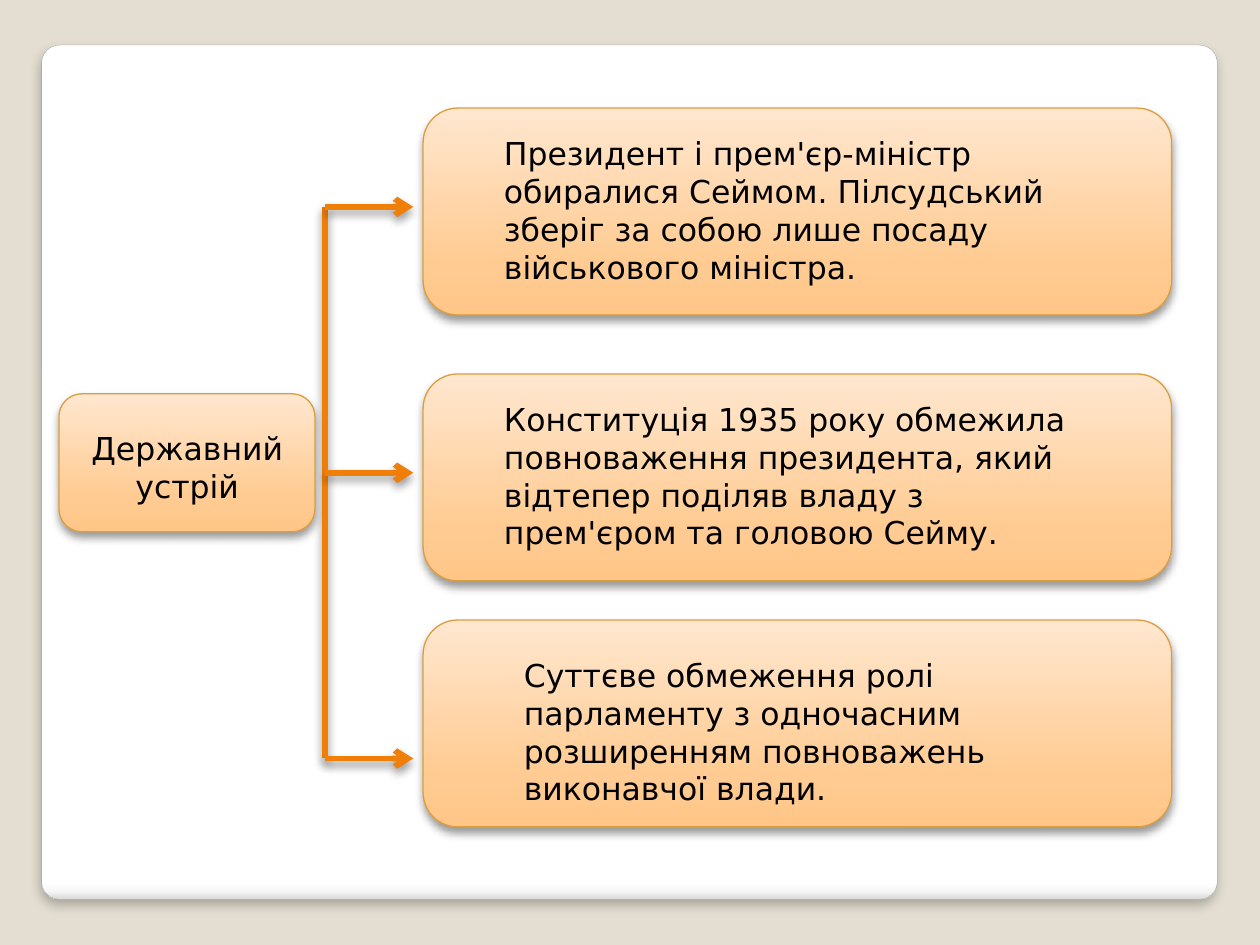
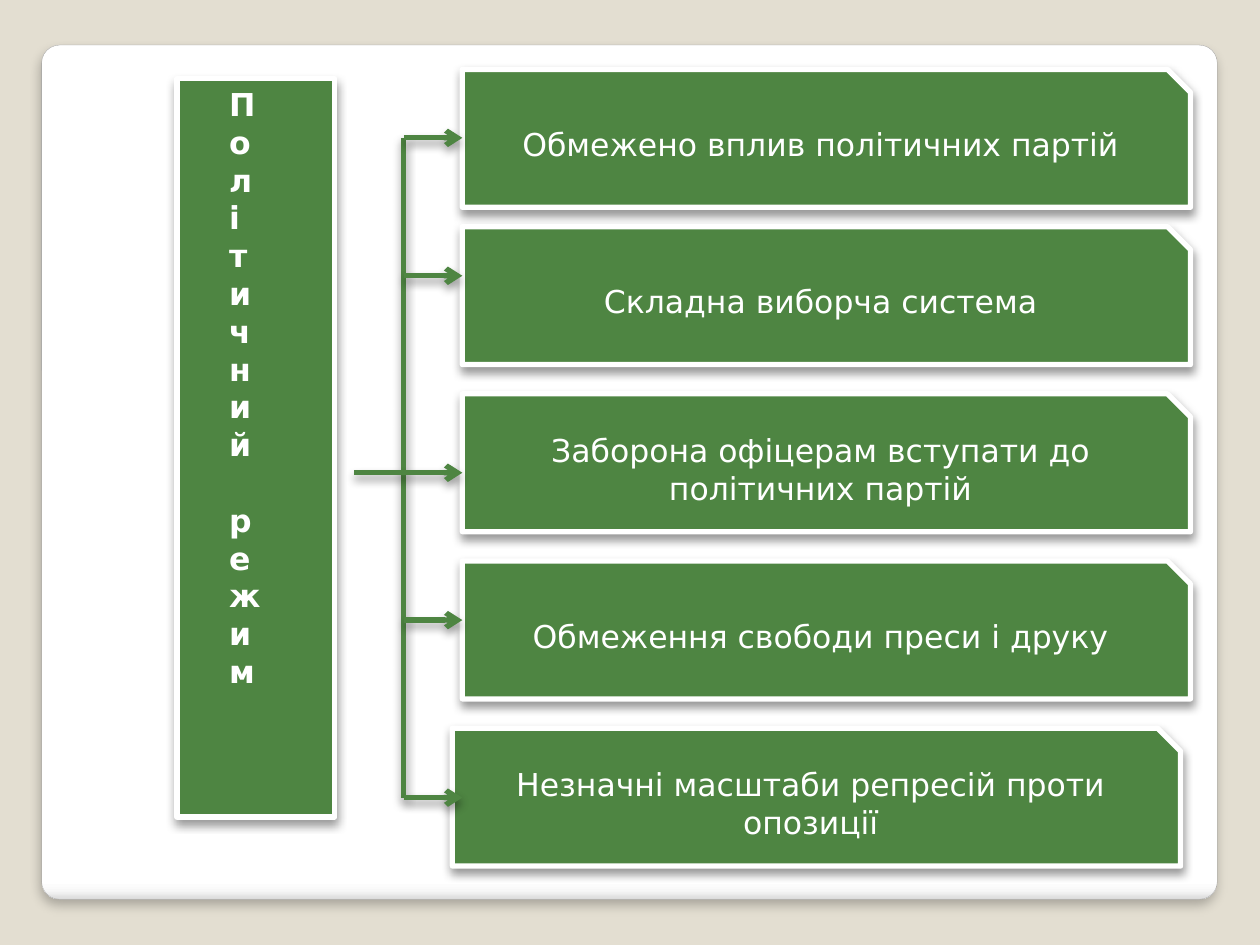
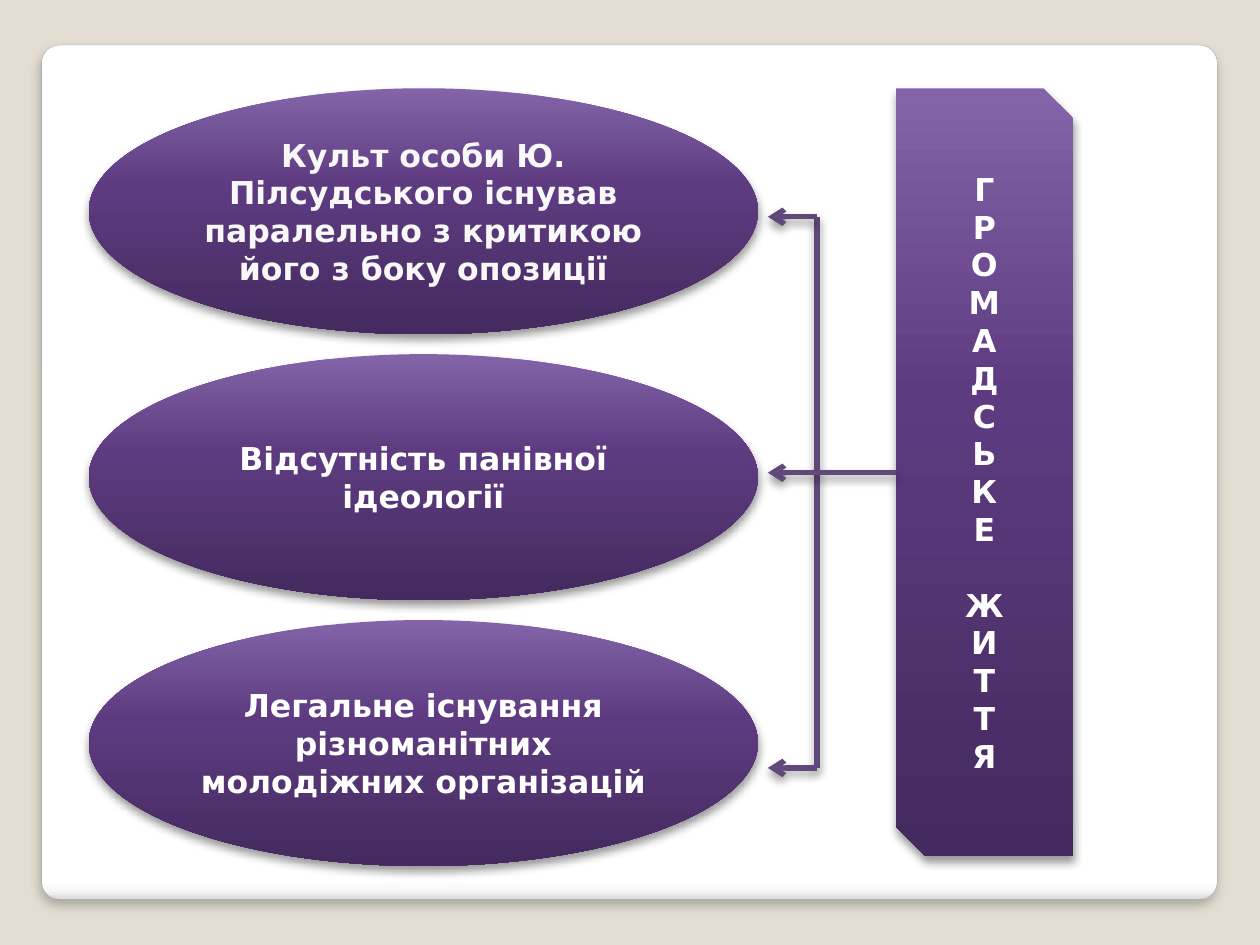
from lxml.etree import SubElement
from pptx import Presentation
from pptx.dml.color import RGBColor
from pptx.enum.shapes import MSO_CONNECTOR, MSO_SHAPE
from pptx.enum.text import MSO_ANCHOR, MSO_AUTO_SIZE, PP_ALIGN
from pptx.oxml.ns import qn
from pptx.util import Cm, Pt

# Shared look
FONT = "DejaVu Sans"
TEXT_SIZE = 18
BLACK = RGBColor(0x00, 0x00, 0x00)
WHITE = RGBColor(0xFF, 0xFF, 0xFF)
OFF_WHITE = RGBColor(0xF8, 0xF8, 0xF8)
BEIGE = RGBColor(0xE3, 0xDE, 0xD1)
CARD_EDGE = RGBColor(0xA4, 0xA4, 0xA4)
ORANGE = RGBColor(0xF0, 0x7F, 0x09)
ORANGE_EDGE = RGBColor(0xDB, 0x9E, 0x3F)
GREEN = RGBColor(0x4E, 0x85, 0x42)
PURPLE = RGBColor(0x60, 0x48, 0x78)

# Gradients run from top to bottom: (percent, colour)
CARD_GRADIENT = [(0, WHITE), (98, WHITE), (99, RGBColor(0xF7, 0xF7, 0xF7)),
                 (100, RGBColor(0xDA, 0xDA, 0xDA))]
ORANGE_GRADIENT = [(0, RGBColor(0xFF, 0xE7, 0xCF)), (75, RGBColor(0xFF, 0xCB, 0x92)),
                   (100, RGBColor(0xFF, 0xC6, 0x87))]
PURPLE_GRADIENT = [(0, RGBColor(0x83, 0x64, 0xA8)), (40, RGBColor(0x5E, 0x3B, 0x81)),
                   (100, RGBColor(0x44, 0x2A, 0x5E))]

# Shadows: opacity percent, blur and distance in points
CARD_SHADOW = (25, 6, 4)
SHADOW = (40, 5.2, 3)

# Slide 1: box top, text offset inside the box, text width, text
STATE_LABEL = "Державний устрій"
STATE_BOXES = [
    (2.18, (1.38, 0.4), 12.3, "Президент і прем'єр-міністр обиралися Сеймом. "
     "Пілсудський зберіг за собою лише посаду військового міністра."),
    (7.54, (1.38, 0.4), 11.91, "Конституція 1935 року обмежила повноваження президента, "
     "який відтепер поділяв владу з прем'єром та головою Сейму."),
    (12.5, (1.78, 0.6), 11.11, "Суттєве обмеження ролі парламенту з одночасним "
     "розширенням повноважень виконавчої влади."),
]
STATE_ARROWS = [4.17, 9.53, 15.29]

# Slide 2: box left, box top, arrow height, text
REGIME_LABEL = "Політичний режим"
REGIME_BOXES = [
    (9.32, 1.4, 2.78, "Обмежено вплив політичних партій"),
    (9.32, 4.57, 5.56, "Складна виборча система"),
    (9.32, 7.94, 9.53, "Заборона офіцерам вступати до політичних партій"),
    (9.32, 11.31, 12.5, "Обмеження свободи преси і друку"),
    (9.12, 14.68, 16.08, "Незначні масштаби репресій проти опозиції"),
]

# Slide 3: text, text colour
SOCIETY_LABEL = "ГРОМАДСЬКЕ ЖИТТЯ"
SOCIETY_ELLIPSES = [
    ("Культ особи Ю. Пілсудського існував паралельно з критикою його з боку опозиції",
     OFF_WHITE),
    ("Відсутність панівної ідеології", WHITE),
    ("Легальне існування різноманітних молодіжних організацій", WHITE),
]
SOCIETY_ARROWS = [4.37, 9.53, 15.48]


def add_shadow(shape, opacity, blur, distance):
    effects = SubElement(shape.element.spPr, qn("a:effectLst"))
    shadow = SubElement(effects, qn("a:outerShdw"), blurRad=str(Pt(blur)),
                        dist=str(Pt(distance)), dir="5400000", rotWithShape="0")
    color = SubElement(shadow, qn("a:srgbClr"), val=str(BLACK))
    SubElement(color, qn("a:alpha"), val=str(opacity * 1000))


def fill_gradient(shape, stops):
    shape.fill.gradient()
    shape.fill.gradient_angle = 270
    stop_list = shape.element.spPr.find(".//" + qn("a:gsLst"))
    for old_stop in list(stop_list):
        stop_list.remove(old_stop)
    for percent, color in stops:
        stop = SubElement(stop_list, qn("a:gs"), pos=str(percent * 1000))
        SubElement(stop, qn("a:srgbClr"), val=str(color))


def add_box(slide, kind, place, fill, edge=None, edge_width=0, shadow=SHADOW):
    """Draw a shadowed shape; fill is one colour or a list of gradient stops."""
    shape = slide.shapes.add_shape(kind, *map(Cm, place))
    if isinstance(fill, list):
        fill_gradient(shape, fill)
    else:
        shape.fill.solid()
        shape.fill.fore_color.rgb = fill
    if edge is None:
        shape.line.fill.background()
    else:
        shape.line.color.rgb = edge
        shape.line.width = Pt(edge_width)
    add_shadow(shape, *shadow)
    return shape


def write(shape, text, color, bold=False, align=PP_ALIGN.CENTER, anchor=MSO_ANCHOR.MIDDLE,
          stacked=False):
    frame = shape.text_frame
    frame.word_wrap = True
    frame.vertical_anchor = anchor
    if stacked:
        frame._txBody.bodyPr.set("vert", "wordArtVert")
    paragraph = frame.paragraphs[0]
    paragraph.text = text
    paragraph.alignment = align
    font = paragraph.font
    font.name, font.size, font.bold = FONT, Pt(TEXT_SIZE), bold
    font.color.rgb = color


def add_text(slide, place, text, color, **style):
    box = slide.shapes.add_textbox(*map(Cm, place))
    write(box, text, color, anchor=MSO_ANCHOR.TOP, **style)
    box.text_frame.auto_size = MSO_AUTO_SIZE.SHAPE_TO_FIT_TEXT


def add_line(slide, start, end, color, width, arrow=False):
    line = slide.shapes.add_connector(MSO_CONNECTOR.STRAIGHT, *map(Cm, start + end))
    line.line.color.rgb = color
    line.line.width = Pt(width)
    if arrow:
        SubElement(line.line._get_or_add_ln(), qn("a:tailEnd"), type="arrow")
    add_shadow(line, *SHADOW)


def add_bracket(slide, trunk, tip, heights, color, width=3, stem=None):
    """Vertical trunk with an arrow at each height; the middle one may start at a stem."""
    add_line(slide, (trunk, heights[0]), (trunk, heights[-1]), color, width)
    for index, height in enumerate(heights):
        is_stem = stem is not None and index == len(heights) // 2
        add_line(slide, (stem if is_stem else trunk, height), (tip, height), color, width, True)


def set_master(presentation, slide):
    """Give the master the background and the white card."""
    master = presentation.slide_master
    master.background.fill.solid()
    master.background.fill.fore_color.rgb = BEIGE
    card = add_box(slide, MSO_SHAPE.ROUNDED_RECTANGLE, (0.84, 0.91, 23.7, 17.22),
                   CARD_GRADIENT, CARD_EDGE, 0.16, CARD_SHADOW)
    card.adjustments[0] = 0.021
    card.element.find(".//" + qn("p:cNvPr")).set("id", "100")
    master.element.find(".//" + qn("p:spTree")).insert(2, card.element)


def build_state(slide):
    left = 8.53
    orange_box = (ORANGE_GRADIENT, ORANGE_EDGE, 0.75)
    for top, (shift_x, shift_y), width, text in STATE_BOXES:
        add_box(slide, MSO_SHAPE.ROUNDED_RECTANGLE, (left, top, 15.09, 4.17), *orange_box)
        add_text(slide, (left + shift_x, top + shift_y, width, 3.33), text, BLACK,
                 align=PP_ALIGN.LEFT)
    add_bracket(slide, 6.55, 8.33, STATE_ARROWS, ORANGE, 3.35)
    add_box(slide, MSO_SHAPE.ROUNDED_RECTANGLE, (1.19, 7.94, 5.16, 2.78), *orange_box)
    add_text(slide, (1.59, 8.53, 4.37, 1.8), STATE_LABEL, BLACK)


def build_regime(slide):
    for left, top, _, text in REGIME_BOXES:
        box = add_box(slide, MSO_SHAPE.SNIP_1_RECTANGLE, (left, top, 14.68, 2.78),
                      GREEN, WHITE, 3)
        write(box, text, WHITE)
    add_box(slide, MSO_SHAPE.RECTANGLE, (3.57, 1.59, 3.18, 14.88), GREEN, WHITE, 3)
    add_text(slide, (4.37, 1.59, 1.42, 15.88), REGIME_LABEL, WHITE, bold=True,
             align=PP_ALIGN.LEFT, stacked=True)
    heights = [height for _, _, height, _ in REGIME_BOXES]
    add_bracket(slide, 8.14, 9.32, heights, GREEN, stem=7.14)


def build_society(slide):
    top, pitch = 1.78, 5.36
    for index, (text, color) in enumerate(SOCIETY_ELLIPSES):
        ellipse = add_box(slide, MSO_SHAPE.OVAL, (1.79, top + index * pitch, 13.49, 4.96),
                          PURPLE_GRADIENT)
        write(ellipse, text, color, bold=True)
    column = add_box(slide, MSO_SHAPE.SNIP_2_DIAG_RECTANGLE, (18.06, top, 3.57, 15.48),
                     PURPLE_GRADIENT)
    write(column, SOCIETY_LABEL, WHITE, bold=True, stacked=True)
    add_bracket(slide, 16.47, 15.48, SOCIETY_ARROWS, PURPLE, stem=18.06)


def main():
    presentation = Presentation()
    presentation.slide_width, presentation.slide_height = Cm(25.4), Cm(19.05)
    blank = presentation.slide_layouts[6]
    for index, build in enumerate((build_state, build_regime, build_society)):
        slide = presentation.slides.add_slide(blank)
        if index == 0:
            set_master(presentation, slide)
        build(slide)
    presentation.save("out.pptx")


if __name__ == "__main__":
    main()
